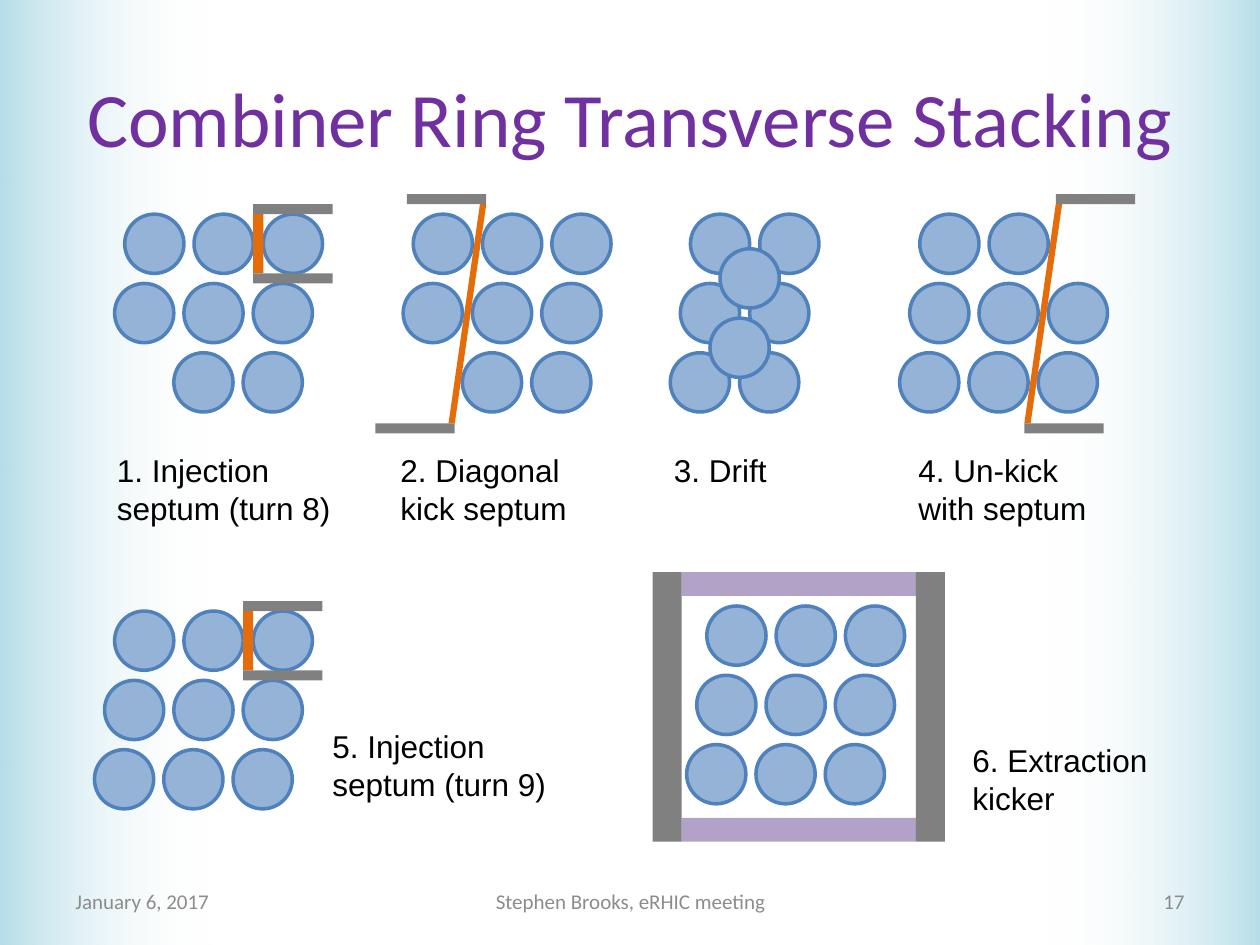
from dataclasses import dataclass

from lxml import etree
from pptx import Presentation
from pptx import util as u
from pptx.dml.color import RGBColor
from pptx.enum import shapes, text
from pptx.oxml.ns import qn
from pptx.shapes.autoshape import Shape
from pptx.slide import Slide

MSO = shapes.MSO_SHAPE
ALIGN = text.PP_ALIGN
ANCHOR = text.MSO_ANCHOR

SLIDE_W, SLIDE_H = 10, 7.5
BALL, GAP = 0.47, 0.08
PITCH = BALL + GAP          # one column or row of the stacking grid
SLANT = GAP                 # each row starts this much further left
PLATE_W, PLATE_H = 0.63, GAP
BLADE_W, BLADE_H, BLADE_SLANT = 0.30, 1.74, 0.25
ALL_FULL = ("ooo", "ooo", "ooo")


@dataclass(frozen=True)
class Theme:
    title: str = "7030A0"
    label: str = "000000"
    footer: str = "8C8C8C"
    edge: str = "B7DEE8"
    edge_end: str = "FFFFFF"
    ball: str = "95B3D7"
    ball_line: str = "4F81BD"
    blade: str = "E46C0A"
    plate: str = "808080"
    pole: str = "B3A2C7"
    head_font: str = "Calibri"
    label_font: str = "Arial"
    title_size: int = 44
    label_size: int = 18
    footer_size: int = 12


@dataclass(frozen=True)
class Stack:
    """Balls on a slanted grid; left and top place the ball at column 0, row 0."""
    left: float
    top: float
    rows: tuple[str, ...]
    extra: tuple[tuple[float, float], ...] = ()


@dataclass(frozen=True)
class Label:
    words: str
    left: float
    top: float
    width: float
    height: float = 0.71


T = Theme()

INJECT_8 = Stack(0.99, 1.7, ("ooo", "ooo", ".oo"))
KICK = Stack(3.28, 1.7, ("ooo", "ooo", ".oo"))
DRIFT = Stack(5.48, 1.7, ("oo", "oo", "oo"), ((0.5, 0.5), (0.5, 1.5)))
UNKICK = Stack(7.3, 1.7, ("oo", "ooo", "ooo"))
INJECT_9 = Stack(0.91, 4.85, ALL_FULL)
EXTRACT = Stack(5.61, 4.81, ALL_FULL)
STACKS = (INJECT_8, KICK, DRIFT, UNKICK, INJECT_9, EXTRACT)

LABELS = (
    Label("1. Injection septum (turn 8)", 0.83, 3.53, 1.97),
    Label("2. Diagonal kick septum", 3.08, 3.53, 1.57),
    Label("3. Drift", 5.25, 3.53, 1.57, 0.4),
    Label("4. Un-kick with septum", 7.19, 3.53, 1.57),
    Label("5. Injection septum (turn 9)", 2.54, 5.72, 2.06),
    Label("6. Extraction kicker", 7.62, 5.83, 2.06),
)

FOOTERS = (
    (Label("January 6, 2017", 0.5, 6.95, 2.33, 0.4), ALIGN.LEFT),
    (Label("Stephen Brooks, eRHIC meeting", 3.42, 6.95, 3.17, 0.4), ALIGN.CENTER),
    (Label("17", 7.17, 6.95, 2.33, 0.4), ALIGN.RIGHT),
)


def box(*inches: float) -> list[u.Length]:
    return [u.Inches(v) for v in inches]


def add_solid(s: Slide, kind: MSO, left: float, top: float, width: float,
              height: float, fill: str, line: str = "") -> Shape:
    sp = s.shapes.add_shape(kind, *box(left, top, width, height))
    sp.shadow.inherit = False
    sp.fill.solid()
    sp.fill.fore_color.rgb = RGBColor.from_string(fill)
    if line:
        sp.line.color.rgb = RGBColor.from_string(line)
        sp.line.width = u.Pt(2)
    else:
        sp.line.fill.background()
    return sp


def write(sp: Shape, words: str, font: str, size: int, color: str,
          align: ALIGN = ALIGN.LEFT, anchor: ANCHOR = ANCHOR.TOP) -> None:
    tf = sp.text_frame
    tf.word_wrap = True
    tf.vertical_anchor = anchor
    p = tf.paragraphs[0]
    p.alignment = align
    r = p.add_run()
    r.text = words
    for name, value in {"name": font, "size": u.Pt(size)}.items():
        setattr(r.font, name, value)
    r.font.color.rgb = RGBColor.from_string(color)


def add_edge(s: Slide, left: float, width: float, rotation: int) -> None:
    """Side band that fades out towards the middle, kept behind the title."""
    sp = s.shapes.add_shape(MSO.RECTANGLE, *box(left, 0, width, SLIDE_H))
    sp.shadow.inherit = False
    sp.line.fill.background()
    sp.rotation = rotation
    sp.fill.gradient()
    sp.fill.gradient_angle = 0
    for stop, color, at in zip(sp.fill.gradient_stops, (T.edge, T.edge_end), (0, 1)):
        stop.color.rgb = RGBColor.from_string(color)
        stop.position = at
    end = sp.element.spPr.findall(".//" + qn("a:srgbClr"))[-1]
    etree.SubElement(end, qn("a:alpha"), val="0")
    s.shapes.title.element.addprevious(sp.element)


def add_stack(s: Slide, stack: Stack) -> None:
    cells = [(col, row) for row, marks in enumerate(stack.rows)
             for col, mark in enumerate(marks) if mark == "o"]
    for col, row in (*cells, *stack.extra):
        add_solid(s, MSO.OVAL, stack.left + col * PITCH - row * SLANT,
                  stack.top + row * PITCH, BALL, BALL, T.ball, T.ball_line)


def add_plate(s: Slide, left: float, top: float) -> None:
    add_solid(s, MSO.RECTANGLE, left, top, PLATE_W, PLATE_H, T.plate)


def add_injection_septum(s: Slide, stack: Stack) -> None:
    """Upright blade and two plates around the ball at column 2, row 0."""
    left, top = stack.left + 2 * PITCH - GAP, stack.top - GAP
    add_solid(s, MSO.RECTANGLE, left, top, GAP, PITCH, T.blade)
    for y in (top, top + PITCH):
        add_plate(s, left, y)


def add_diagonal_septum(s: Slide, stack: Stack, col: int, plates_right: bool) -> None:
    """Slanted blade left of the given column, with a plate at each end."""
    left, top = stack.left + col * PITCH - 0.27, stack.top - GAP
    sp = add_solid(s, MSO.PARALLELOGRAM, left, top, BLADE_W, BLADE_H, T.blade)
    sp.adjustments[0] = BLADE_SLANT / BLADE_W
    end = left if plates_right else left + BLADE_W - BLADE_SLANT - PLATE_W
    add_plate(s, end + BLADE_SLANT, top - PLATE_H)
    add_plate(s, end, top + BLADE_H)


def add_kicker(s: Slide, left: float, top: float) -> None:
    width, height, side, pole = 2.32, 2.14, 0.23, 0.19
    for y in (top, top + height - pole):
        add_solid(s, MSO.RECTANGLE, left + side, y, width - 2 * side, pole, T.pole)
    for x in (left, left + width - side):
        add_solid(s, MSO.RECTANGLE, x, top, side, height, T.plate)


def main() -> None:
    prs = Presentation()
    prs.slide_width, prs.slide_height = box(SLIDE_W, SLIDE_H)
    s = prs.slides.add_slide(prs.slide_layouts[5])

    title = s.shapes.title
    title.left, title.top, title.width, title.height = box(0.5, 0.3, 9, 1.25)
    write(title, "Combiner Ring Transverse Stacking", T.head_font, T.title_size,
          T.title, ALIGN.CENTER, ANCHOR.MIDDLE)
    edge_w = 1.69
    add_edge(s, SLIDE_W - edge_w, edge_w, 180)
    add_edge(s, 0, edge_w, 0)

    add_kicker(s, 5.18, 4.54)
    for stack in STACKS:
        add_stack(s, stack)
    for stack in (INJECT_8, INJECT_9):
        add_injection_septum(s, stack)
    add_diagonal_septum(s, KICK, 1, plates_right=False)
    add_diagonal_septum(s, UNKICK, 2, plates_right=True)

    for label in LABELS:
        sp = s.shapes.add_textbox(*box(label.left, label.top, label.width, label.height))
        write(sp, label.words, T.label_font, T.label_size, T.label)
    for label, align in FOOTERS:
        sp = s.shapes.add_textbox(*box(label.left, label.top, label.width, label.height))
        write(sp, label.words, T.head_font, T.footer_size, T.footer, align, ANCHOR.MIDDLE)

    prs.save("out.pptx")


if __name__ == "__main__":
    main()
